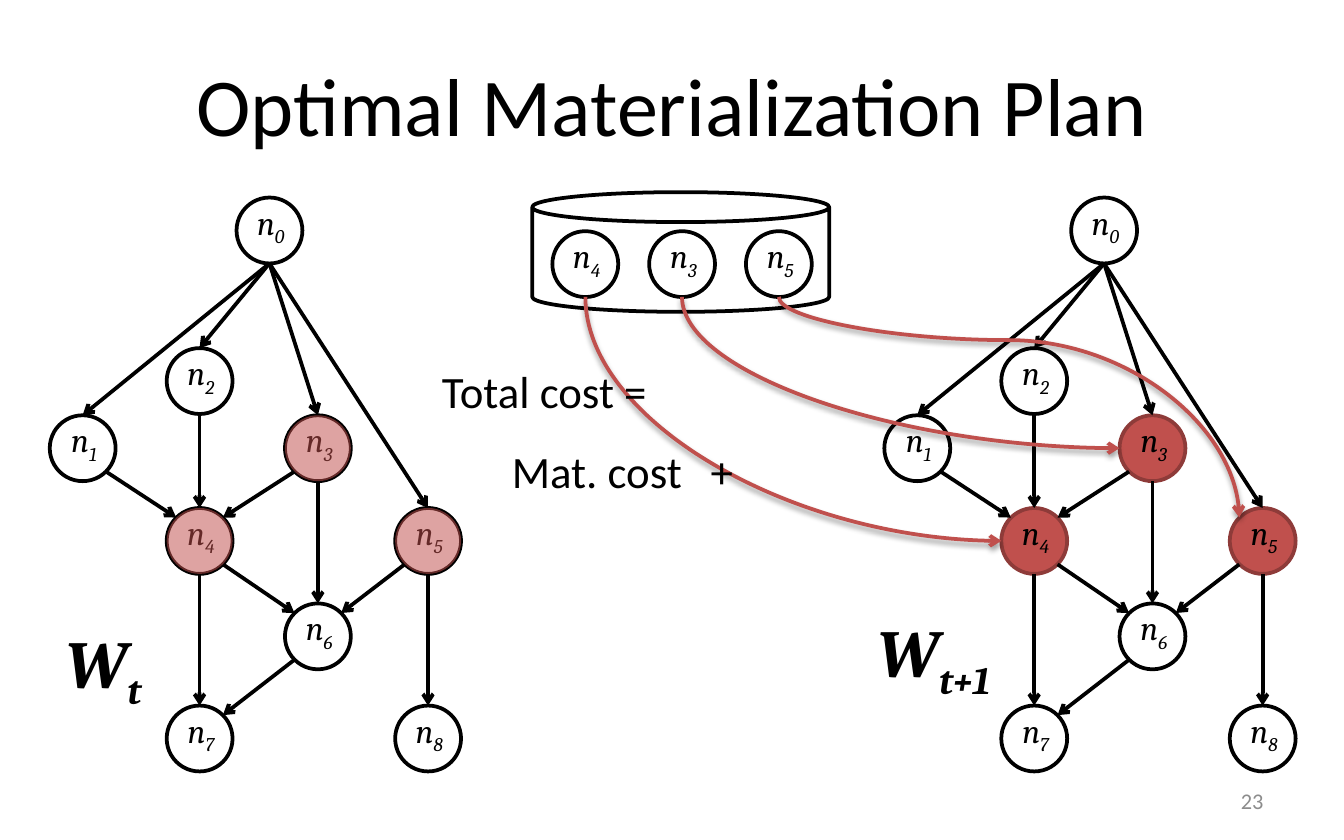
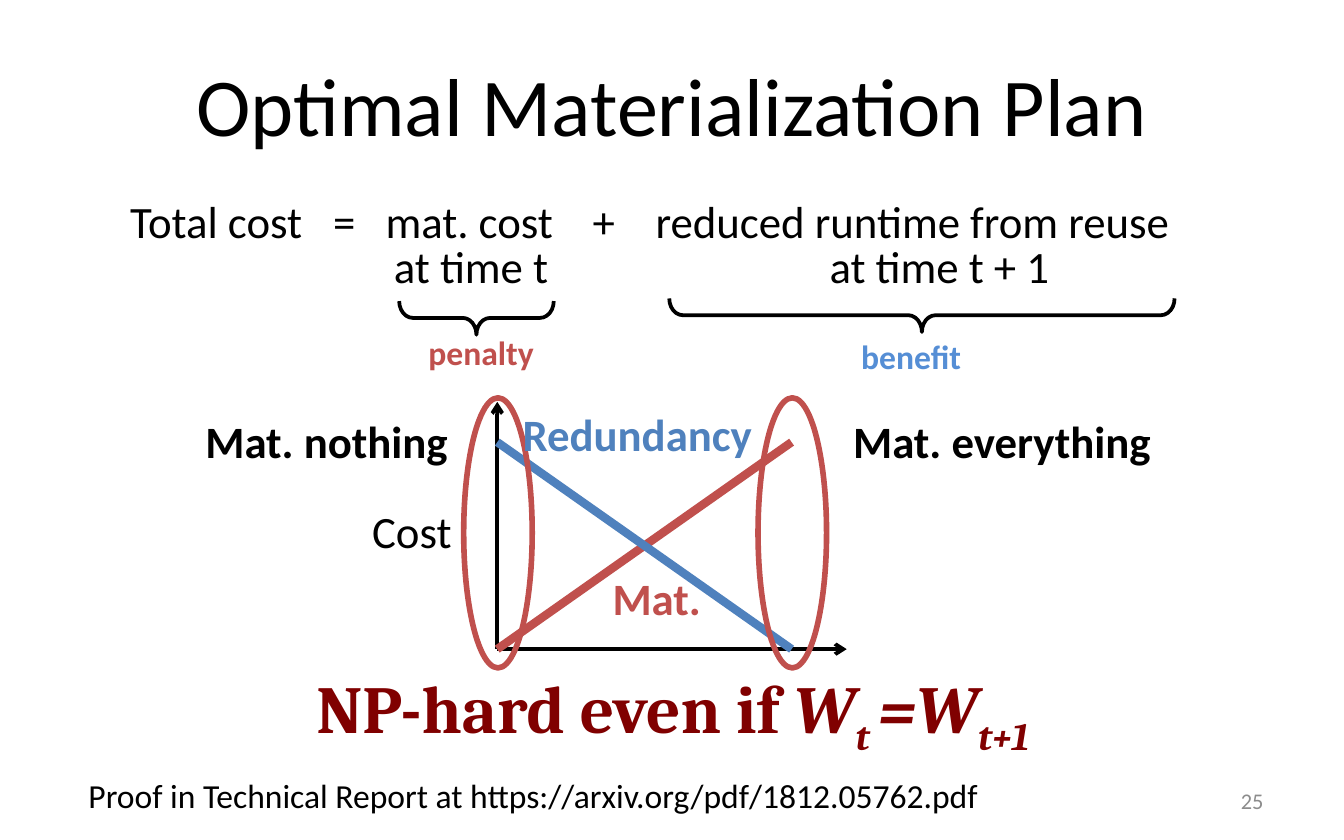
from dataclasses import dataclass

from lxml import etree
from pptx import Presentation
from pptx.dml.color import RGBColor
from pptx.enum.shapes import MSO_CONNECTOR, MSO_SHAPE
from pptx.enum.text import MSO_ANCHOR, MSO_AUTO_SIZE, PP_ALIGN
from pptx.oxml.ns import qn
from pptx.util import Inches, Pt

STRAIGHT, CURVE = MSO_CONNECTOR.STRAIGHT, MSO_CONNECTOR.CURVE
OVAL, CAN, BRACE = MSO_SHAPE.OVAL, MSO_SHAPE.CAN, MSO_SHAPE.LEFT_BRACE
TOP, MIDDLE = MSO_ANCHOR.TOP, MSO_ANCHOR.MIDDLE
LEFT, CENTER, RIGHT = PP_ALIGN.LEFT, PP_ALIGN.CENTER, PP_ALIGN.RIGHT
FIT_SHAPE, NO_FIT = MSO_AUTO_SIZE.SHAPE_TO_FIT_TEXT, MSO_AUTO_SIZE.NONE


@dataclass(frozen=True)
class Theme:
    black: str = "000000"
    white: str = "FFFFFF"
    gray: str = "8C8C8C"
    red: str = "C0504D"
    dark_red: str = "8E3B39"
    maroon: str = "800000"
    blue: str = "4F81BD"
    light_blue: str = "558ED5"
    body_font: str = "Calibri"
    math_font: str = "Cambria"
    title_size: float = 44
    formula_size: float = 36
    body_size: float = 24
    label_size: float = 18
    number_size: float = 12
    line: float = 2
    ring_line: float = 3
    plot_line: float = 4.5


@dataclass(frozen=True)
class Box:
    left: float
    top: float
    width: float
    height: float

    def point(self, x, y):
        return self.left + x, self.top + y

    def inside(self, x, y, width, height):
        return Box(*self.point(x, y), width, height)

    def inches(self):
        return [Inches(v) for v in (self.left, self.top, self.width, self.height)]


THEME = Theme()
NODE = 0.49
SUBSCRIPT = {"baseline": -25}
NODE_PLACES = [
    (1.39, 0), (0, 1.62), (0.87, 1.12), (1.75, 1.62), (0.87, 2.31),
    (2.57, 2.31), (1.75, 3.02), (0.87, 3.78), (2.57, 3.78),
]
DIRECTIONS = {
    "N": (0, -1), "S": (0, 1), "W": (-1, 0), "NW": (-0.71, -0.71),
    "NE": (0.71, -0.71), "SW": (-0.71, 0.71), "SE": (0.71, 0.71),
}
EDGES = [
    (1, "SE", 4, "NW"), (2, "S", 4, "N"), (3, "SW", 4, "NE"),
    (4, "S", 7, "N"), (4, "SE", 6, "NW"), (5, "SW", 6, "NE"),
    (6, "SW", 7, "NE"), (5, "S", 8, "N"), (3, "S", 6, "N"),
    (0, "S", 1, "N"), (0, "S", 2, "N"), (0, "S", 3, "N"), (0, "S", 5, "N"),
]
REUSED = (3, 4, 5)


def write_text(shapes, box, text, *, font=THEME.body_font, size=THEME.body_size,
               color=THEME.black, bold=False, italic=False, align=LEFT,
               anchor=TOP, wrap=True, fit=FIT_SHAPE, tabs=()):
    shape = shapes.add_textbox(*box.inches())
    frame = shape.text_frame
    frame.word_wrap = wrap
    frame.auto_size = fit
    frame.vertical_anchor = anchor
    paragraph = frame.paragraphs[0]
    paragraph.alignment = align
    if tabs:
        tab_list = etree.SubElement(paragraph._p.get_or_add_pPr(), qn("a:tabLst"))
        for position in tabs:
            etree.SubElement(tab_list, qn("a:tab"), pos=str(Inches(position)), algn="l")
    runs = [(text, {})] if isinstance(text, str) else text
    for content, changes in runs:
        run = paragraph.add_run()
        run.text = content
        run.font.name = font
        run.font.size = Pt(size)
        run.font.color.rgb = RGBColor.from_string(color)
        run.font.bold = bold
        run.font.italic = changes.get("italic", italic)
        if "baseline" in changes:
            run._r.get_or_add_rPr().set("baseline", str(changes["baseline"] * 1000))
    return shape


def add_figure(shapes, kind, box, fill=None, line=THEME.black, weight=THEME.line, alpha=None):
    shape = shapes.add_shape(kind, *box.inches())
    shape.shadow.inherit = False
    if fill:
        shape.fill.solid()
        shape.fill.fore_color.rgb = RGBColor.from_string(fill)
    else:
        shape.fill.background()
    if alpha:
        color = shape._element.spPr.find(qn("a:solidFill"))[0]
        etree.SubElement(color, qn("a:alpha"), val=str(alpha * 1000))
    if line:
        shape.line.color.rgb = RGBColor.from_string(line)
        shape.line.width = Pt(weight)
    else:
        shape.line.fill.background()
    return shape


def add_line(shapes, start, end, color=THEME.black, weight=THEME.line, arrow=True, kind=STRAIGHT):
    connector = shapes.add_connector(kind, *[Inches(v) for v in (*start, *end)])
    connector.line.color.rgb = RGBColor.from_string(color)
    connector.line.width = Pt(weight)
    if arrow:
        etree.SubElement(connector.line._get_or_add_ln(), qn("a:tailEnd"), type="arrow")
    etree.SubElement(connector._element.spPr, qn("a:effectLst"))
    return connector


def add_reuse_curve(shapes, start, end, bend=None):
    across, down = end[0] - start[0], end[1] - start[1]
    left = (start[0] + end[0] - down) / 2
    top = (start[1] + end[1] - across) / 2
    connector = add_line(shapes, (left + down, top), (left, top + across),
                         color=THEME.red, kind=CURVE)
    properties = connector._element.spPr
    properties.find(qn("a:xfrm")).set("rot", str(270 * 60000))
    geometry = properties.find(qn("a:prstGeom"))
    if bend is None:
        geometry.set("prst", "curvedConnector2")
    else:
        etree.SubElement(geometry.find(qn("a:avLst")), qn("a:gd"),
                         name="adj1", fmla=f"val {round(bend * 100000)}")
    shadow = etree.SubElement(properties.find(qn("a:effectLst")), qn("a:outerShdw"),
                              blurRad=str(Pt(3.1)), dist=str(Pt(1.6)),
                              dir=str(90 * 60000), rotWithShape="0")
    color = etree.SubElement(shadow, qn("a:srgbClr"), val=THEME.black)
    etree.SubElement(color, qn("a:alpha"), val="38000")


def add_node(shapes, box, number, fill=THEME.white, line=THEME.black):
    add_figure(shapes, OVAL, box, fill, line)
    write_text(shapes, box.inside(0.02, 0, 0.47, 0.4), [("n", {}), (str(number), SUBSCRIPT)],
               font=THEME.math_font, size=THEME.label_size, italic=True,
               align=CENTER, anchor=MIDDLE, wrap=False)


def node_site(box, direction):
    x, y = DIRECTIONS[direction]
    return box.point(NODE / 2 * (1 + x), NODE / 2 * (1 + y))


def add_workflow(slide, box, filled=()):
    shapes = slide.shapes.add_group_shape().shapes
    nodes = [box.inside(x, y, NODE, NODE) for x, y in NODE_PLACES]
    for number, node in enumerate(nodes):
        colors = (THEME.red, THEME.dark_red) if number in filled else (THEME.white, THEME.black)
        add_node(shapes, node, number, *colors)
    for source, leaving, target, entering in EDGES:
        add_line(shapes, node_site(nodes[source], leaving), node_site(nodes[target], entering))
    return nodes


def add_storage(slide, box):
    add_figure(slide.shapes, CAN, box, THEME.white)
    stored = {}
    for column, number in enumerate((4, 3, 5)):
        stored[number] = box.inside(0.15 + 0.72 * column, 0.29, NODE, NODE)
        add_node(slide.shapes, stored[number], number)
    return stored


def add_workflow_name(slide, box, subscript):
    write_text(slide.shapes, box, [("W", {}), (subscript, SUBSCRIPT)], font=THEME.math_font,
               size=THEME.formula_size, bold=True, italic=True)


def add_brace(slide, box, label, label_box, color):
    shapes = slide.shapes.add_group_shape().shapes
    middle_x, middle_y = box.point(box.width / 2, box.height / 2)
    upright = Box(middle_x - box.height / 2, middle_y - box.width / 2, box.height, box.width)
    brace = add_figure(shapes, BRACE, upright)
    brace.rotation = 270
    brace.adjustments[0] = 0.405
    write_text(shapes, label_box, label, size=THEME.label_size, color=color, bold=True, wrap=False)


def add_equation(slide, box):
    write_text(slide.shapes, box.inside(0, 0, 8.18, 0.5),
               "Total cost\t=\tmat. cost\t+\treduced runtime from reuse",
               tabs=(1.51, 1.9, 3.44, 3.91))
    for text, x, width in (("at time t", 1.82, 1.63), ("at time t + 1", 5.02, 2.2)):
        write_text(slide.shapes, box.inside(x, 0.34, width, 0.5), text, align=CENTER)
    add_brace(slide, box.inside(2.1, 0.85, 1.15, 0.25), "penalty",
              box.inside(2.22, 1.03, 1, 0.4), THEME.red)
    add_brace(slide, box.inside(4.11, 0.83, 3.76, 0.25), "benefit",
              box.inside(5.44, 1.06, 0.96, 0.4), THEME.light_blue)


def add_cost_plot(slide, box):
    shapes = slide.shapes
    run, rise = 2.19, 1.54
    origin = box.point(0, box.height)
    add_line(shapes, origin, box.point(0, 0))
    add_line(shapes, origin, box.point(box.width, box.height))
    high = box.height - rise
    add_line(shapes, origin, box.point(run, high), THEME.red, THEME.plot_line, arrow=False)
    add_line(shapes, box.point(0, high), box.point(run, box.height),
             THEME.blue, THEME.plot_line, arrow=False)
    for x in (0, run):
        add_figure(shapes, OVAL, box.inside(x - 0.25, -0.03, 0.51, 2.01),
                   line=THEME.red, weight=THEME.ring_line)
    labels = [
        ("Cost", -1.03, 0.71, 0.8, THEME.black, False),
        ("Mat.", 0.76, 1.21, 0.87, THEME.red, True),
        ("Redundancy", 0.09, -0.01, 1.93, THEME.blue, True),
        ("Mat. nothing", -2.27, 0.04, 2.03, THEME.black, True),
    ]
    for text, x, y, width, color, bold in labels:
        write_text(shapes, box.inside(x, y, width, 0.5), text, color=color, bold=bold, wrap=False)
    write_text(shapes, box.inside(2.48, 0.04, 2.48, 0.5), "Mat. everything",
               bold=True, align=RIGHT)


def add_base_slide(presentation, number):
    slide = presentation.slides.add_slide(presentation.slide_layouts[6])
    write_text(slide.shapes, Box(0.5, 0.25, 9, 1.04), "Optimal Materialization Plan",
               size=THEME.title_size, align=CENTER, anchor=MIDDLE, fit=NO_FIT)
    write_text(slide.shapes, Box(7.17, 5.79, 2.33, 0.33), str(number), size=THEME.number_size,
               color=THEME.gray, align=RIGHT, anchor=MIDDLE, fit=NO_FIT)
    return slide


def build_reuse_slide(presentation):
    slide = add_base_slide(presentation, 23)
    current = add_workflow(slide, Box(0.37, 1.47, 3.06, 4.27))
    following = add_workflow(slide, Box(6.58, 1.47, 3.06, 4.27), REUSED)
    stored = add_storage(slide, Box(3.96, 1.43, 2.21, 0.89))
    for number in REUSED:
        add_figure(slide.shapes, OVAL, current[number], THEME.red, line=None, alpha=52)
    add_workflow_name(slide, Box(0.39, 4.57, 0.96, 0.71), "t")
    add_workflow_name(slide, Box(6.43, 4.49, 1.14, 0.71), "t+1")
    for number, entering, bend in ((4, "W", None), (3, "W", None), (5, "NW", 0.196)):
        add_reuse_curve(slide.shapes, node_site(stored[number], "S"),
                        node_site(following[number], entering), bend)
    write_text(slide.shapes, Box(3.19, 2.66, 1.78, 0.5), "Total cost =", wrap=False)
    write_text(slide.shapes, Box(3.71, 3.25, 1.88, 0.5), "Mat. cost\t+", wrap=False, tabs=(1.48,))


def build_tradeoff_slide(presentation):
    slide = add_base_slide(presentation, 25)
    add_equation(slide, Box(0.87, 1.39, 8.18, 1.46))
    add_cost_plot(slide, Box(3.7, 2.99, 2.6, 1.84))
    slanted = {"italic": True}
    lowered = {**slanted, **SUBSCRIPT}
    write_text(slide.shapes, Box(1.68, 4.91, 6.65, 0.71),
               [("NP-hard even if", {}), (" W", slanted), ("t ", lowered),
                ("=W", slanted), ("t+1", lowered)],
               font=THEME.math_font, size=THEME.formula_size, color=THEME.maroon,
               bold=True, align=CENTER)
    write_text(slide.shapes, Box(0.56, 5.72, 6.96, 0.4),
               "Proof in Technical Report at https://arxiv.org/pdf/1812.05762.pdf",
               size=THEME.label_size, wrap=False)


def main():
    presentation = Presentation()
    presentation.slide_width = Inches(10)
    presentation.slide_height = Inches(6.25)
    build_reuse_slide(presentation)
    build_tradeoff_slide(presentation)
    presentation.save("out.pptx")


if __name__ == "__main__":
    main()
